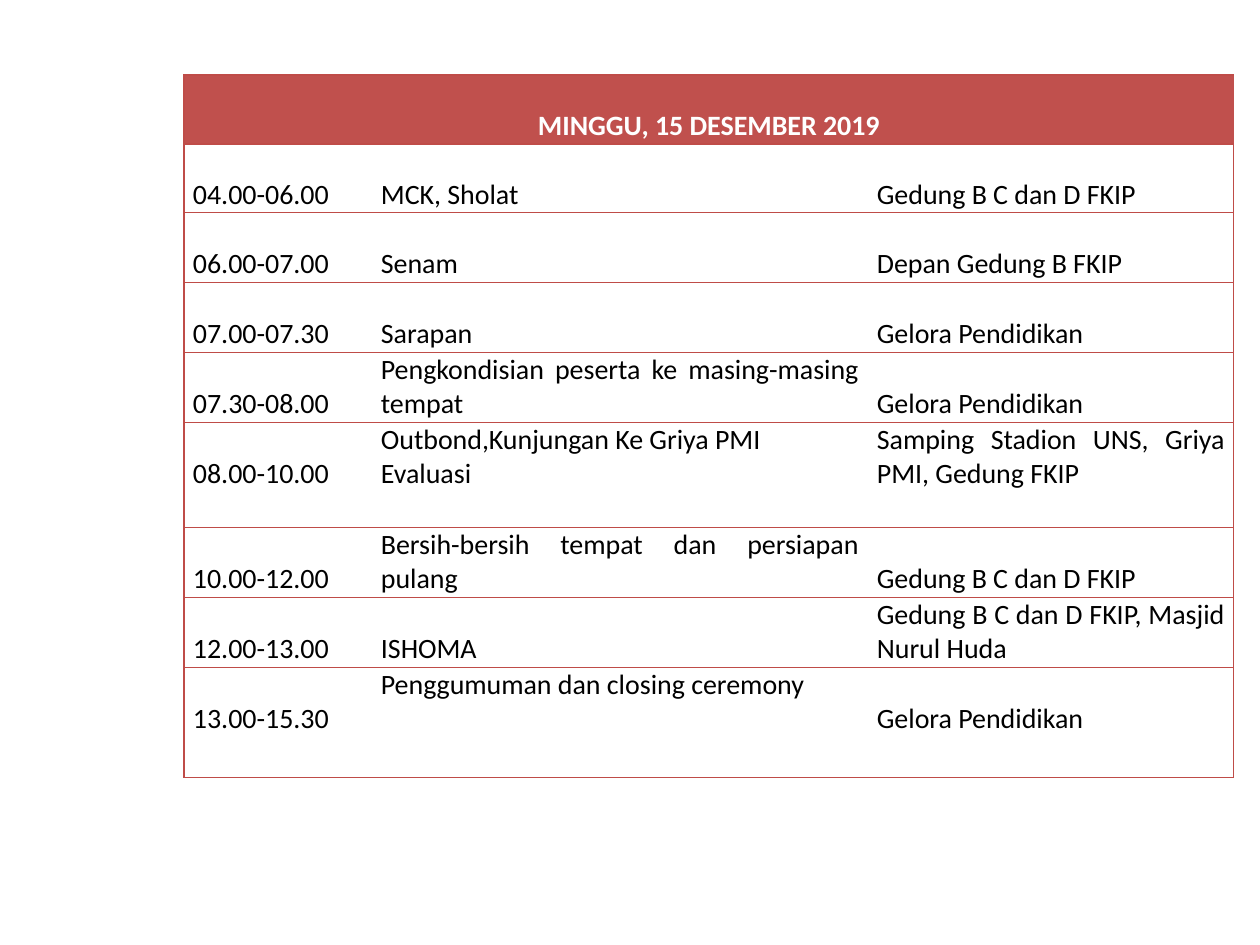
from pptx import Presentation
from pptx.dml.color import RGBColor
from pptx.enum.text import PP_ALIGN
from pptx.util import Emu, Pt
from lxml.etree import SubElement
from pptx.oxml.ns import qn

PX = 914400 // 126
THEME = {
    "font": "Calibri", "size": Pt(16), "rule": Pt(0.75),
    "head": "C0504D", "line": "BF4C48", "text": "000000", "light": "FFFFFF",
}
LONG = 25  # longer cells are set single-spaced

TITLE = "MINGGU, 15 DESEMBER 2019"
PLAN = [
    ("04.00-06.00", "MCK, Sholat", "Gedung B C dan D FKIP"),
    ("06.00-07.00", "Senam", "Depan Gedung B FKIP"),
    ("07.00-07.30", "Sarapan", "Gelora Pendidikan"),
    ("07.30-08.00", "Pengkondisian peserta ke masing-masing tempat",
     "Gelora Pendidikan"),
    ("08.00-10.00", "Outbond,Kunjungan Ke Griya PMI\nEvaluasi",
     "Samping Stadion UNS, Griya PMI, Gedung FKIP"),
    ("10.00-12.00", "Bersih-bersih tempat dan persiapan pulang",
     "Gedung B C dan D FKIP"),
    ("12.00-13.00", "ISHOMA", "Gedung B C dan D FKIP, Masjid Nurul Huda"),
    ("13.00-15.30", "Penggumuman dan closing ceremony", "Gelora Pendidikan"),
]
COLS = [188, 496, 366]
ROWS = [69, 69, 70, 70, 70, 105, 70, 70, 110]


def edge(cell, sides):
    """Rule the given sides of a cell and clear the others."""
    props = cell._tc.get_or_add_tcPr()
    for side in "LRTB":
        line = SubElement(props, qn(f"a:ln{side}"), w=str(THEME["rule"]))
        if side in sides:
            fill = SubElement(line, qn("a:solidFill"))
            SubElement(fill, qn("a:srgbClr"), val=THEME["line"])
        else:
            SubElement(line, qn("a:noFill"))


def write(cell, text, color, align, bold=False):
    """Fill a cell with evenly styled paragraphs."""
    cell.margin_left = cell.margin_right = Emu(9 * PX)
    cell.margin_top = cell.margin_bottom = 0
    cell.text = text
    for para in cell.text_frame.paragraphs:
        para.alignment = align
        para.line_spacing = 1.0 if len(text) > LONG else 2.0
        font = para.font
        font.name, font.size, font.bold = THEME["font"], THEME["size"], bold
        font.color.rgb = RGBColor.from_string(color)


deck = Presentation()
deck.slide_width, deck.slide_height = Emu(1260 * PX), Emu(945 * PX)
slide = deck.slides.add_slide(deck.slide_layouts[6])

# Table grid
table = slide.shapes.add_table(
    len(ROWS), len(COLS), Emu(184 * PX), Emu(75 * PX),
    Emu(sum(COLS) * PX), Emu(sum(ROWS) * PX)).table
table.first_row = table.horz_banding = False
for col, wide in zip(table.columns, COLS):
    col.width = Emu(wide * PX)
for row, high in zip(table.rows, ROWS):
    row.height = Emu(high * PX)

# Borders: outer frame and row rules, no column rules
for row in table.rows:
    for cell, sides in zip(row.cells, ("LTB", "TB", "RTB")):
        edge(cell, sides)
        cell.fill.background()

# Day heading
head = table.cell(0, 0)
head.merge(table.cell(0, 2))
head.fill.solid()
head.fill.fore_color.rgb = RGBColor.from_string(THEME["head"])
write(head, TITLE, THEME["light"], PP_ALIGN.CENTER, bold=True)

# Time, activity and place
for r, items in enumerate(PLAN, 1):
    for c, text in enumerate(items):
        write(table.cell(r, c), text, THEME["text"], PP_ALIGN.JUSTIFY)

deck.save("out.pptx")
